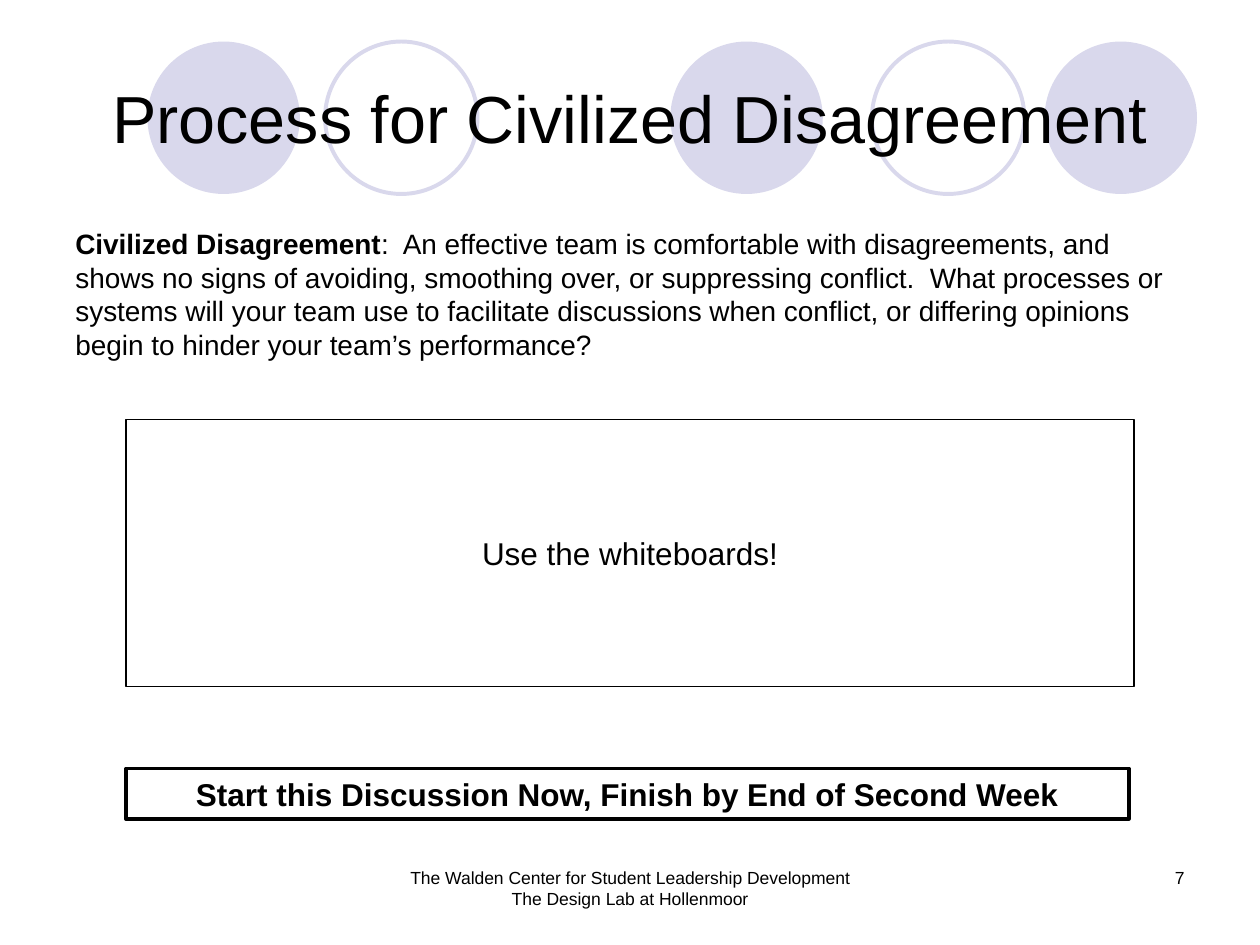
from typing import NamedTuple

from pptx import Presentation
from pptx.dml.color import RGBColor
from pptx.enum.shapes import MSO_SHAPE
from pptx.enum.text import MSO_ANCHOR, PP_ALIGN
from pptx.util import Inches, Pt

COLORS = {"ink": "000000", "paper": "FFFFFF", "lilac": "D9D8EC"}


class Run(NamedTuple):
    text: str
    bold: bool = False


class Block(NamedTuple):
    box: tuple[float, float, float, float]
    lines: list[list[Run]]
    size: float
    align: PP_ALIGN = PP_ALIGN.CENTER
    anchor: MSO_ANCHOR = MSO_ANCHOR.TOP
    border: float = 0
    fill: str = ""
    before: float = 0
    wrap: bool = True


class Circle(NamedTuple):
    left: float
    solid: bool


CIRCLES = [
    Circle(5.32, True),
    Circle(8.29, True),
    Circle(1.17, True),
    Circle(6.92, False),
    Circle(2.58, False),
]

BLOCKS = [
    Block((0.5, 0.3, 9, 1.25), [[Run("Process for Civilized Disagreement")]], 38,
          anchor=MSO_ANCHOR.MIDDLE),
    Block((0.5, 1.75, 9, 3.5),
          [[Run("Civilized Disagreement", True),
            Run(":  An effective team is comfortable with disagreements, and shows "
                "no signs of avoiding, smoothing over, or suppressing conflict.  "
                "What processes or systems will your team use to facilitate "
                "discussions when conflict, or differing opinions begin to hinder "
                "your team’s performance?")]],
          16, PP_ALIGN.LEFT, before=3.2),
    Block((1, 3.33, 8, 2.12), [[Run("Use the whiteboards!")]], 18,
          anchor=MSO_ANCHOR.MIDDLE, border=0.75, wrap=False),
    Block((7.17, 6.83, 2.33, 0.5), [[Run("7")]], 10, PP_ALIGN.RIGHT),
    Block((2.98, 6.83, 4.04, 0.5),
          [[Run("The Walden Center for Student Leadership Development")],
           [Run("The Design Lab at Hollenmoor")]], 10),
    Block((1, 6.1, 7.96, 0.4),
          [[Run("Start this Discussion Now, Finish by End of Second Week", True)]], 18,
          border=2, fill="paper"),
]


def color(name: str) -> RGBColor:
    return RGBColor.from_string(COLORS[name])


def paint(shape, fill: str, line: str, width: float) -> None:
    """Set fill and outline; an empty colour name means none."""
    shape.shadow.inherit = False
    if fill:
        shape.fill.solid()
        shape.fill.fore_color.rgb = color(fill)
    else:
        shape.fill.background()
    if line:
        shape.line.color.rgb = color(line)
        shape.line.width = Pt(width)
    else:
        shape.line.fill.background()


def draw_circle(slide, circle: Circle) -> None:
    side = Inches(1.21)
    shape = slide.shapes.add_shape(
        MSO_SHAPE.OVAL, Inches(circle.left), Inches(0.33), side, side)
    if circle.solid:
        paint(shape, "lilac", "", 0)
    else:
        paint(shape, "", "lilac", 2.25)


def draw_block(slide, block: Block) -> None:
    box = [Inches(n) for n in block.box]
    if block.border:
        shape = slide.shapes.add_shape(MSO_SHAPE.RECTANGLE, *box)
        paint(shape, block.fill, "ink", block.border)
    else:
        shape = slide.shapes.add_textbox(*box)
    frame = shape.text_frame
    frame.word_wrap = block.wrap
    frame.vertical_anchor = block.anchor
    for i, line in enumerate(block.lines):
        para = frame.add_paragraph() if i else frame.paragraphs[0]
        para.alignment = block.align
        para.space_before = Pt(block.before)
        for part in line:
            run = para.add_run()
            run.text = part.text
            style = {"name": "Arial", "size": Pt(block.size), "bold": part.bold}
            for key, value in style.items():
                setattr(run.font, key, value)
            run.font.color.rgb = color("ink")


def main() -> None:
    deck = Presentation()
    deck.slide_width, deck.slide_height = Inches(10), Inches(7.5)
    slide = deck.slides.add_slide(deck.slide_layouts[6])
    for circle in CIRCLES:
        draw_circle(slide, circle)
    for block in BLOCKS:
        draw_block(slide, block)
    deck.save("out.pptx")


if __name__ == "__main__":
    main()
